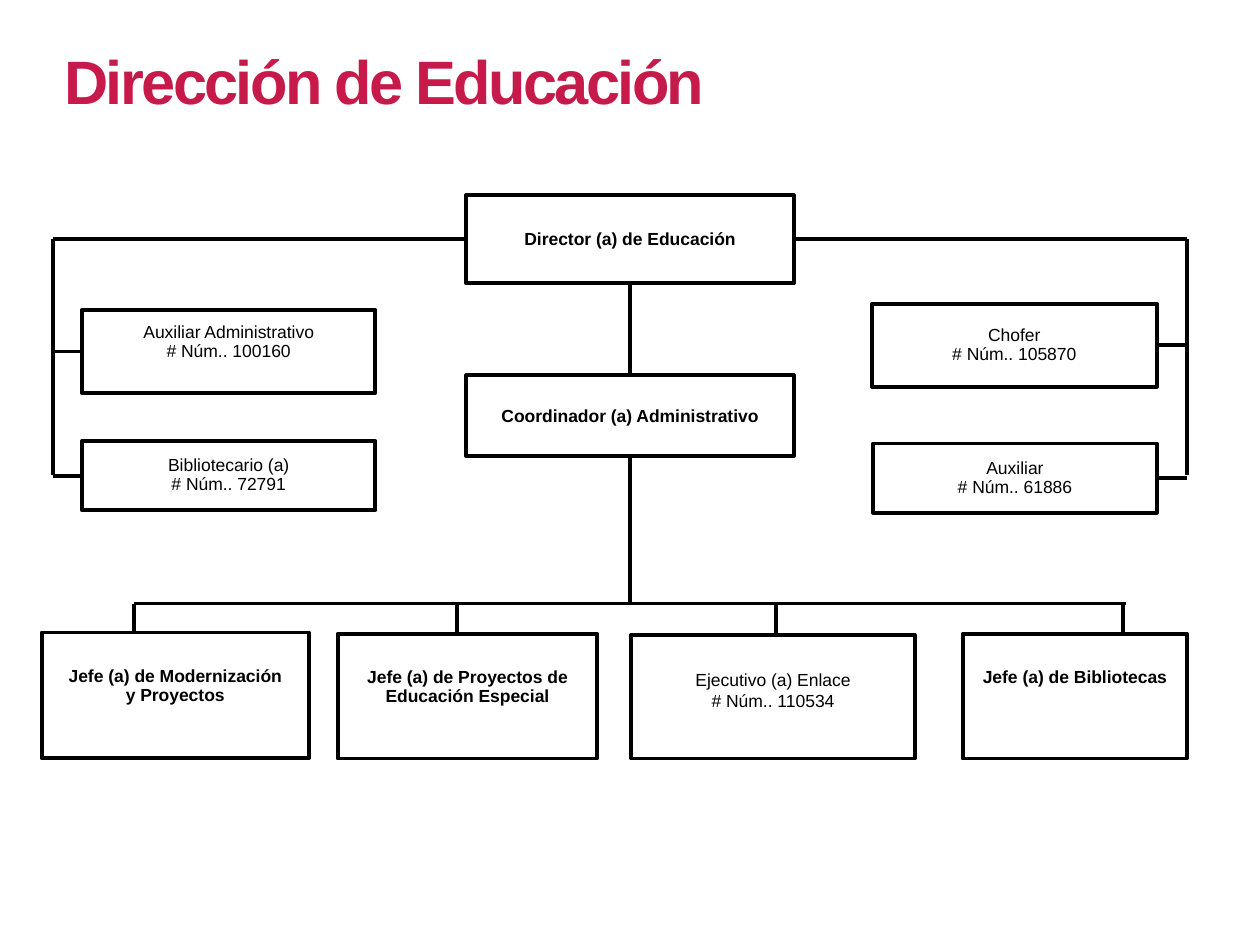
from lxml import etree
from pptx import Presentation
from pptx.dml.color import RGBColor
from pptx.enum.shapes import MSO_CONNECTOR, MSO_SHAPE
from pptx.enum.text import MSO_ANCHOR, PP_ALIGN
from pptx.oxml.ns import qn
from pptx.util import Inches, Pt

RECT = MSO_SHAPE.RECTANGLE
STRAIGHT = MSO_CONNECTOR.STRAIGHT
TOP, LEFT, BOTTOM, RIGHT = range(4)
CRIMSON = RGBColor(0xC5, 0x1A, 0x4A)
BLACK = RGBColor(0, 0, 0)
WHITE = RGBColor(0xFF, 0xFF, 0xFF)
FONT = "Arial"
LINE_WIDTH = Pt(2.25)

TRUNK_TOP = 1.9
BUS_Y = 4.79
BUS_LEFT, BUS_RIGHT = 1.06, 8.94

# Text, place (left, top, width, height), side facing the trunk, trunk x, text lift
STAFF = [
    ("Auxiliar Administrativo\n# Núm.. 100160", (0.65, 2.46, 2.33, 0.66), LEFT, 0.42, 0.15),
    ("Bibliotecario (a)\n# Núm.. 72791", (0.65, 3.5, 2.33, 0.55), LEFT, 0.42, 0),
    ("Chofer\n# Núm.. 105870", (6.92, 2.41, 2.26, 0.66), RIGHT, 9.42, 0),
    ("Auxiliar\n# Núm.. 61886", (6.93, 3.52, 2.25, 0.55), RIGHT, 9.42, 0),
]

# Text, place, x of the drop from the bus, bold, line spacing, text lift
HEADS = [
    ("Jefe (a) de Modernización\ny Proyectos", (0.33, 5.02, 2.12, 1), 1.06, True, 0.9, 0.14),
    ("Jefe (a) de Proyectos de\nEducación Especial", (2.68, 5.03, 2.06, 0.99), 3.63, True, 0.9, 0.14),
    ("Ejecutivo (a) Enlace\n# Núm.. 110534", (5.01, 5.04, 2.25, 0.98), 6.16, False, 1, 0.1),
    ("Jefe (a) de Bibliotecas", (7.64, 5.03, 1.78, 0.99), 8.91, True, 1, 0.31),
]


def style_run(r, size, color, bold):
    r.font.name = FONT
    r.font.size = Pt(size)
    r.font.bold = bold
    r.font.color.rgb = color


def add_title(s, text):
    sp = s.shapes.title
    sp.left, sp.top, sp.width, sp.height = map(Inches, (0.41, 0.29, 7.03, 0.69))
    tf = sp.text_frame
    tf.text = text
    tf.vertical_anchor = MSO_ANCHOR.TOP
    p = tf.paragraphs[0]
    p.alignment = PP_ALIGN.LEFT
    p.line_spacing = 1
    r = p.runs[0]
    style_run(r, 35, CRIMSON, True)
    r.font._element.set("spc", "-150")


def add_box(s, text, place, bold=False, spacing=0.9, lift=0):
    sp = s.shapes.add_shape(RECT, *map(Inches, place))
    sp.shadow.inherit = False
    sp.fill.solid()
    sp.fill.fore_color.rgb = WHITE
    sp.line.color.rgb = BLACK
    sp.line.width = LINE_WIDTH
    tf = sp.text_frame
    tf.text = text
    tf.word_wrap = False
    tf.vertical_anchor = MSO_ANCHOR.MIDDLE
    tf.margin_bottom = Inches(0.05 + lift)
    for p in tf.paragraphs:
        p.alignment = PP_ALIGN.CENTER
        p.line_spacing = spacing
        for r in p.runs:
            style_run(r, 10, BLACK, bold)
    return sp


def add_line(s, x1, y1, x2, y2, begin=None, end=None):
    """Draw a line; begin and end are optional (box, side) pairs to join."""
    c = s.shapes.add_connector(STRAIGHT, *map(Inches, (x1, y1, x2, y2)))
    c.line.color.rgb = BLACK
    c.line.width = LINE_WIDTH
    etree.SubElement(c._element.spPr, qn("a:effectLst"))
    if begin:
        c.begin_connect(*begin)
    if end:
        c.end_connect(*end)


def add_leadership(s):
    director = add_box(s, "Director (a) de Educación", (3.7, 1.55, 2.6, 0.7), bold=True)
    coordinator = add_box(s, "Coordinador (a) Administrativo", (3.7, 2.98, 2.6, 0.64),
                          bold=True, spacing=1)
    add_line(s, 5, 2.25, 5, 2.98, (director, BOTTOM), (coordinator, TOP))
    add_line(s, 5, 3.62, 5, BUS_Y, (coordinator, BOTTOM))
    return director


def add_staff(s, director):
    # Trunks beside the director
    for side, edge, trunk_x in ((LEFT, 3.7, 0.42), (RIGHT, 6.3, 9.42)):
        add_line(s, edge, TRUNK_TOP, trunk_x, TRUNK_TOP, (director, side))
        add_line(s, trunk_x, TRUNK_TOP, trunk_x, 3.77)
    # Boxes joined to the trunks
    for text, place, side, trunk_x, lift in STAFF:
        box = add_box(s, text, place, lift=lift)
        left, top, width, height = place
        edge = left if side == LEFT else left + width
        y = top + height / 2
        add_line(s, edge, y, trunk_x, y, (box, side))


def add_heads(s):
    add_line(s, BUS_LEFT, BUS_Y, BUS_RIGHT, BUS_Y)
    for text, place, drop_x, bold, spacing, lift in HEADS:
        add_box(s, text, place, bold, spacing, lift)
        add_line(s, drop_x, BUS_Y, drop_x, place[1])


def main():
    prs = Presentation()
    prs.slide_width, prs.slide_height = Inches(10), Inches(7.5)
    s = prs.slides.add_slide(prs.slide_layouts[5])
    add_title(s, "Dirección de Educación")
    director = add_leadership(s)
    add_staff(s, director)
    add_heads(s)
    prs.save("out.pptx")


if __name__ == "__main__":
    main()
